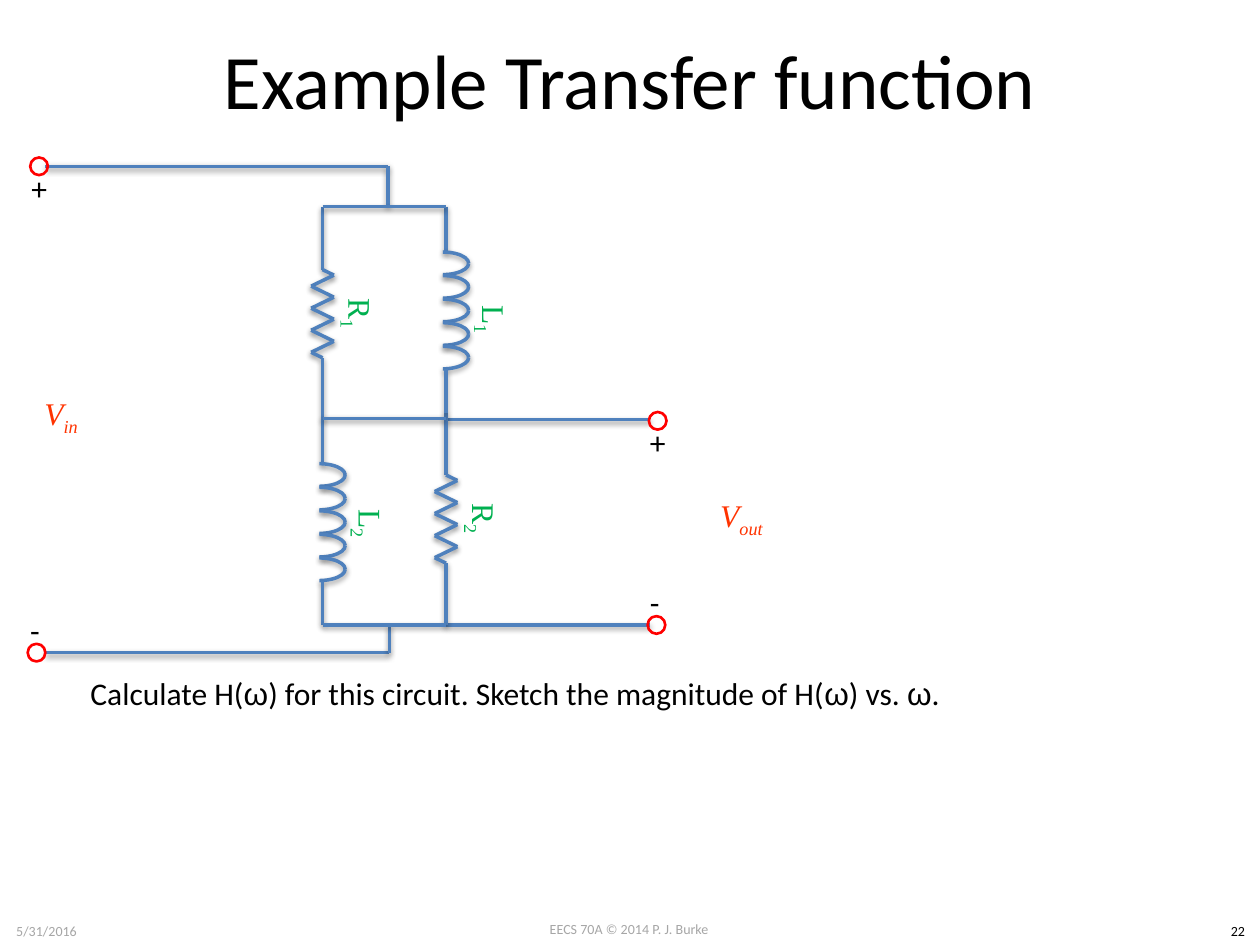
import pptx
import pptx.util
import pptx.dml.color
import pptx.enum.shapes
import pptx.enum.text
import pptx.oxml
import pptx.oxml.ns

Inches = pptx.util.Inches
Pt = pptx.util.Pt
RGB = pptx.dml.color.RGBColor
Shape = pptx.enum.shapes.MSO_SHAPE
Align = pptx.enum.text.PP_ALIGN
Anchor = pptx.enum.text.MSO_ANCHOR
qn = pptx.oxml.ns.qn

BLUE = RGB(0x4F, 0x81, 0xBD)
RED = RGB(0xFF, 0x00, 0x00)
ORANGE = RGB(0xFF, 0x33, 0x00)
GREEN = RGB(0x00, 0xB0, 0x50)
GREY = RGB(0xA6, 0xA6, 0xA6)
BLACK = RGB(0x00, 0x00, 0x00)
SERIF = "Times New Roman"

SHADOW = (
    f'<a:effectLst {pptx.oxml.ns.nsdecls("a")}>'
    '<a:outerShdw blurRad="40000" dist="20000" dir="5400000" rotWithShape="0">'
    '<a:srgbClr val="000000"><a:alpha val="38000"/></a:srgbClr>'
    '</a:outerShdw></a:effectLst>'
)


def write(shape, *runs, size=18, font="Calibri", color=BLACK, italic=None,
          align=None, anchor=None, wrap=True):
    """Fill a shape with one paragraph; a run is text or (text, font, baseline)."""
    frame = shape.text_frame
    frame.word_wrap = wrap
    if anchor is not None:
        frame.vertical_anchor = anchor
    para = frame.paragraphs[0]
    para.alignment = align
    for item in runs:
        words, face, base = (item, font, 0) if isinstance(item, str) else item
        run = para.add_run()
        run.text = words
        run.font.name = face
        run.font.size = Pt(size)
        run.font.italic = italic
        run.font.color.rgb = color
        if base:
            run.font._element.set("baseline", str(base * 1000))


def place(shapes, x, y, w, h, *runs, turn=0, **form):
    box = shapes.add_textbox(Inches(x), Inches(y), Inches(w), Inches(h))
    box.rotation = turn
    write(box, *runs, **form)


def label(shapes, x, y, w, h, name, sub, **form):
    """Centred symbol with a subscript."""
    place(shapes, x, y, w, h, name, (sub, SERIF, -25), font=SERIF,
          align=Align.CENTER, anchor=Anchor.MIDDLE, **form)


def ink(part):
    """Blue stroke with a soft shadow."""
    part.line.color.rgb = BLUE
    part.line.width = Pt(2)
    part.element.spPr.append(pptx.oxml.parse_xml(SHADOW))


def wire(shapes, *points):
    """Straight segments through the given points."""
    for (x1, y1), (x2, y2) in zip(points, points[1:]):
        ink(shapes.add_connector(
            pptx.enum.shapes.MSO_CONNECTOR.STRAIGHT,
            Inches(x1), Inches(y1), Inches(x2), Inches(y2)))


def resist(slide, x, y, sub):
    """Vertical resistor with leads and label, 1.69 inches tall."""
    shapes = slide.shapes.add_group_shape().shapes
    first, last = y + 0.5, y + 1.2
    step = (last - first) / 8
    zig = [(x + (0.09 if i % 2 == 0 else -0.09), first + step * (i + 0.5))
           for i in range(8)]
    wire(shapes, (x, y), (x, first), *zig, (x, last), (x, y + 1.69))
    label(slide.shapes, x - 0.31, y + 0.48, 1.19, 0.73, "R", sub,
          color=GREEN, turn=90)


def coil(slide, x, y, sub, drop):
    """Vertical inductor of five turns with leads and label."""
    shapes = slide.shapes.add_group_shape().shapes
    wire(shapes, (x, y), (x, y + 0.36))
    for i in range(5):
        for flip in (False, True):
            arc = shapes.add_shape(
                Shape.ARC, Inches(x - 0.23), Inches(y + 0.36 + 0.187 * i),
                Inches(0.41), Inches(0.18))
            arc.fill.background()
            ink(arc)
            if flip:
                arc.element.spPr.find(qn("a:xfrm")).set("flipV", "1")
    wire(shapes, (x, y + 1.29), (x, y + 1.64))
    label(slide.shapes, x - 0.23, y + drop, 1.19, 0.73, "L", sub,
          color=GREEN, turn=90)


def port(shapes, plus, minus, sub, x, y):
    """Two terminals with signs, and the voltage between them."""
    label(shapes, x, y, 0.77, 0.61, "V", sub, color=ORANGE, italic=True)
    for (left, top), sign, dx, dy, w in ((plus, "+", -0.09, 0.04, 0.33),
                                         (minus, "-", -0.08, -0.31, 0.28)):
        ring = shapes.add_shape(Shape.OVAL, Inches(left), Inches(top),
                                Inches(0.14), Inches(0.14))
        ring.shadow.inherit = False
        ring.fill.background()
        ring.line.color.rgb = RED
        ring.line.width = Pt(1.5)
        place(shapes, left + dx, top + dy, w, 0.4, sign, wrap=False)


def circuit(slide, left, right, top, mid, low):
    """Two parallel R-L pairs in series between the rails."""
    shapes = slide.shapes
    # Rails to the terminals
    wire(shapes, (0.36, 1.32), (3.08, 1.32), (3.08, top))
    wire(shapes, (0.36, 5.18), (3.09, 5.18), (3.09, low))
    for y in (mid + 0.01, low):
        wire(shapes, (right, y), (5.16, y))
    # Terminals
    port(shapes.add_group_shape().shapes, (5.15, 3.27), (5.14, 4.89),
         "out", 5.5, 3.8)
    port(shapes, (0.24, 1.25), (0.22, 5.11), "in", 0.1, 2.99)
    # Parts
    resist(slide, right, 3.27, "2")
    resist(slide, left, top, "1")
    coil(slide, right, top, "1", 0.53)
    coil(slide, left, mid, "2", 0.47)
    # Bars that join the pairs
    for y in (top, mid, low):
        wire(shapes, (left, y), (right, y))


def footer(shapes, y):
    for x, dy, w, words, color in (
            (3.83, 0, 2.33, "EECS 70A © 2014 P. J. Burke", GREY),
            (0, 0.01, 0.74, "5/31/2016", GREY),
            (9.65, 0.01, 0.35, "22", BLACK)):
        place(shapes, x, y + dy, w, 0.24, words, size=8, color=color,
              align=Align.CENTER)


def main():
    deck = pptx.Presentation()
    deck.slide_width, deck.slide_height = Inches(10), Inches(7.5)
    slide = deck.slides.add_slide(deck.slide_layouts[5])
    # Title
    title = slide.shapes.title
    title.left, title.top = Inches(0.5), Inches(0)
    title.width, title.height = Inches(9), Inches(1.25)
    write(title, "Example Transfer function", size=44, align=Align.CENTER,
          anchor=Anchor.MIDDLE)
    # Task
    omega = ("ω", "Arial", 0)
    place(slide.shapes, 0.62, 5.3, 8.03, 0.4, "Calculate H(", omega,
          ") for this circuit. Sketch the magnitude of H(", omega,
          ") vs. ", omega, ".")
    circuit(slide, 2.56, 3.54, 1.64, 3.32, 4.96)
    footer(slide.shapes, 7.26)
    deck.save("out.pptx")


if __name__ == "__main__":
    main()
